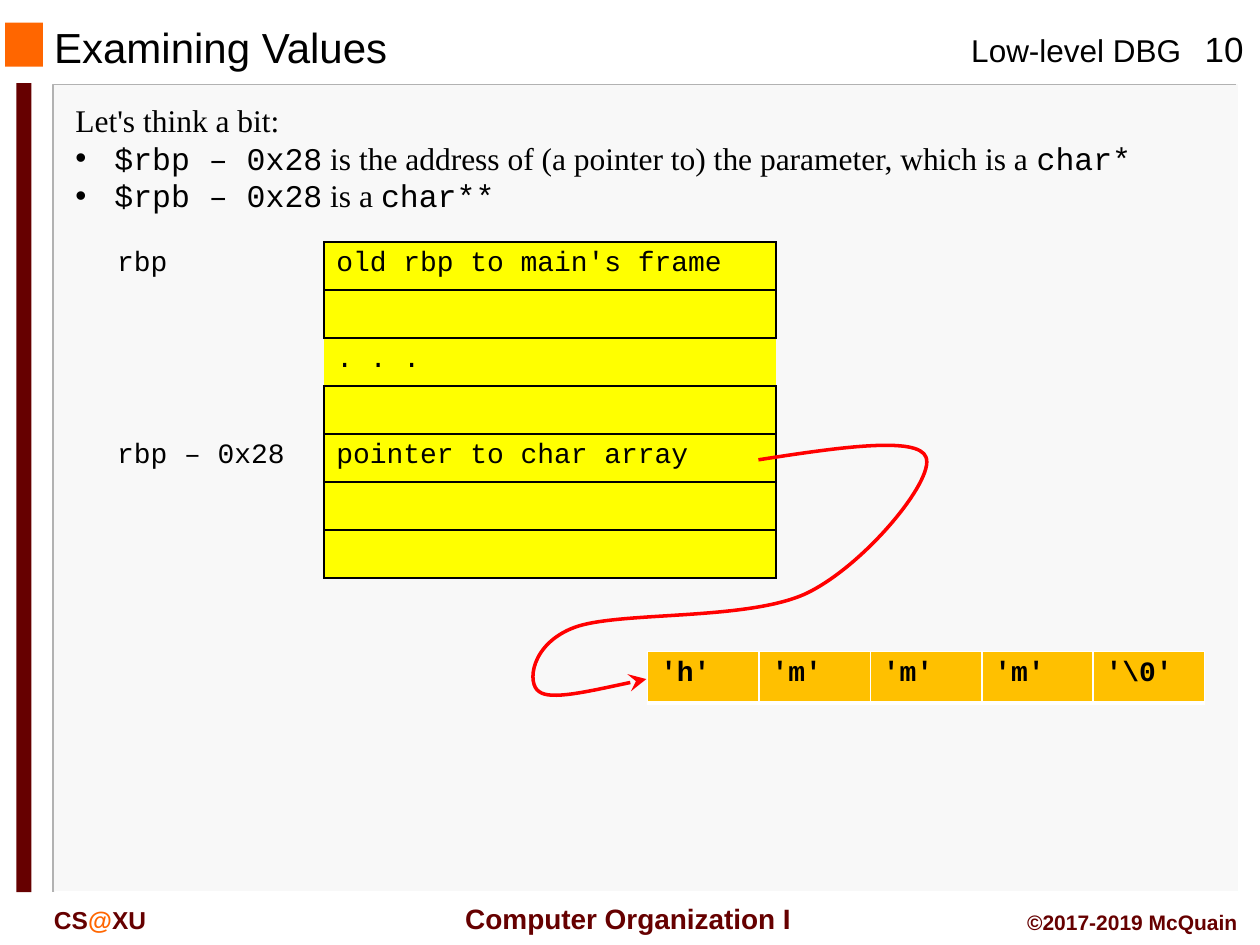
from dataclasses import dataclass
from typing import NamedTuple, Optional

from lxml import etree
from pptx import Presentation
from pptx import util as u
from pptx.dml.color import RGBColor
from pptx.enum import shapes, text
from pptx.oxml.ns import qn


@dataclass(frozen=True)
class Theme:
    sans: str = "Arial"
    serif: str = "Times New Roman"
    mono: str = "Courier New"
    black: str = "000000"
    white: str = "FFFFFF"
    panel: str = "F8F8F8"
    rule: str = "B2B2B2"
    maroon: str = "660000"
    orange: str = "FF6600"
    stack: str = "FFFF00"
    array: str = "FFC000"
    arrow: str = "FF0000"
    title_size: int = 24
    page_size: int = 20
    body_size: int = 18
    cell_size: int = 16
    mark_size: int = 14
    credit_size: int = 12


THEME = Theme()
NO_TABLE_STYLE = "{2D5ABB26-0587-4C30-8999-92F81FD0307C}"


class Box(NamedTuple):
    left: float
    top: float
    width: float
    height: float

    def emu(self):
        return [u.Inches(value) for value in self]


class Run(NamedTuple):
    text: str
    font: Optional[str] = None
    color: Optional[str] = None


class Label(NamedTuple):
    box: Box
    runs: list
    size: int
    color: str = THEME.black
    bold: bool = False
    align: text.PP_ALIGN = text.PP_ALIGN.LEFT
    wrap: bool = True


class Border(NamedTuple):
    sides: str
    color: str
    width: float = 1


def rgb(color: str) -> RGBColor:
    return RGBColor.from_string(color)


def style_font(font, name: str, size: int, color: str, bold: bool = False) -> None:
    font.name, font.size, font.bold = name, u.Pt(size), bold
    font.color.rgb = rgb(color)


def add_runs(paragraph, runs: list) -> None:
    for item in runs:
        run = paragraph.add_run()
        run.text = item.text
        if item.font:
            run.font.name = item.font
        if item.color:
            run.font.color.rgb = rgb(item.color)


def add_block(slide, box: Box, color: str) -> None:
    shape = slide.shapes.add_shape(shapes.MSO_SHAPE.RECTANGLE, *box.emu())
    shape.shadow.inherit = False
    shape.fill.solid()
    shape.fill.fore_color.rgb = rgb(color)
    shape.line.fill.background()


def add_outline(slide, points: list, color: str, width: float):
    corners = [(u.Inches(x), u.Inches(y)) for x, y in points]
    builder = slide.shapes.build_freeform(*corners[0])
    builder.add_line_segments(corners[1:], close=False)
    shape = builder.convert_to_shape()
    shape.shadow.inherit = False
    shape.fill.background()
    shape.line.color.rgb = rgb(color)
    shape.line.width = u.Pt(width)
    return shape


def add_curved_arrow(slide, points: list, color: str, width: float) -> None:
    """Start point, then two control points and an end point per curve."""
    shape = add_outline(slide, points, color, width)
    outline = shape._element.spPr.find(".//" + qn("a:path"))
    segments = outline.findall(qn("a:lnTo"))
    for start in range(0, len(segments), 3):
        curve = etree.SubElement(outline, qn("a:cubicBezTo"))
        for segment in segments[start:start + 3]:
            curve.append(segment[0])
            outline.remove(segment)
    etree.SubElement(shape.line._get_or_add_ln(), qn("a:tailEnd"),
                     type="stealth", w="lg", len="lg")


def add_label(slide, label: Label) -> None:
    frame = slide.shapes.add_textbox(*label.box.emu()).text_frame
    frame.word_wrap = label.wrap
    paragraph = frame.paragraphs[0]
    paragraph.alignment = label.align
    add_runs(paragraph, label.runs)
    style_font(paragraph.font, THEME.sans, label.size, label.color, label.bold)


def add_bullet(paragraph) -> None:
    properties = paragraph._p.get_or_add_pPr()
    properties.set("marL", str(u.Inches(0.31)))
    properties.set("indent", str(-u.Inches(0.31)))
    etree.SubElement(properties, qn("a:buFont"), typeface=THEME.sans)
    etree.SubElement(properties, qn("a:buChar"), char="•")


def add_plain_table(slide, box: Box, rows: int, widths: list):
    table_frame = slide.shapes.add_table(rows, len(widths), *box.emu())
    table = table_frame.table
    table.first_row = table.horz_banding = False
    table._tbl.tblPr.find(qn("a:tableStyleId")).text = NO_TABLE_STYLE
    for column, width in zip(table.columns, widths):
        column.width = u.Inches(width)
    for row in table.rows:
        row.height = u.Inches(box.height / rows)
    return table


def fill_cell(cell, words: str, fill: Optional[str] = None, borders=(), bold=False) -> None:
    properties = cell._tc.get_or_add_tcPr()
    for border in borders:
        for side in border.sides:
            line = etree.SubElement(properties, qn(f"a:ln{side}"), w=str(u.Pt(border.width)))
            paint = etree.SubElement(line, qn("a:solidFill"))
            etree.SubElement(paint, qn("a:srgbClr"), val=border.color)
    if fill:
        cell.fill.solid()
        cell.fill.fore_color.rgb = rgb(fill)
    else:
        cell.fill.background()
    cell.text = words
    style_font(cell.text_frame.paragraphs[0].font, THEME.mono, THEME.cell_size, THEME.black, bold)


def add_frame(slide) -> None:
    # Panel with its edges, corner square and side bar
    add_block(slide, Box(0.43, 0.67, 9.4, 6.41), THEME.panel)
    add_outline(slide, [(9.81, 0.67), (0.42, 0.67), (0.42, 7.08)], THEME.rule, 1)
    add_outline(slide, [(9.83, 0.67), (9.83, 7.08), (0.44, 7.08)], THEME.white, 1)
    add_block(slide, Box(0.04, 0.18, 0.3, 0.35), THEME.orange)
    add_block(slide, Box(0.13, 0.66, 0.12, 6.42), THEME.maroon)

    # Header and footer
    align = text.PP_ALIGN
    for label in (
        Label(Box(7.61, 0.2, 1.89, 0.4), [Run("Low-level DBG")], THEME.body_size, wrap=False),
        Label(Box(9.38, 0.17, 0.67, 0.43), [Run("10")], THEME.page_size, align=align.CENTER),
        Label(Box(3.48, 7.11, 2.95, 0.37), [Run(" Computer Organization I")],
              THEME.cell_size, THEME.maroon, True, align.CENTER, False),
        Label(Box(0.33, 7.13, 1.5, 0.33), [Run("CS"), Run("@", color=THEME.orange), Run("XU")],
              THEME.mark_size, THEME.maroon, True),
        Label(Box(7, 7.17, 2.92, 0.3), [Run("©2017-2019 McQuain")],
              THEME.credit_size, THEME.maroon, True, align.RIGHT),
    ):
        add_label(slide, label)


def add_title(slide, words: str) -> None:
    title = slide.shapes.title
    title.left, title.top, title.width, title.height = Box(0.33, 0.18, 6.33, 0.38).emu()
    title.text_frame.text = words
    title.text_frame.auto_size = text.MSO_AUTO_SIZE.NONE
    title.text_frame.vertical_anchor = text.MSO_ANCHOR.MIDDLE
    paragraph = title.text_frame.paragraphs[0]
    paragraph.alignment = text.PP_ALIGN.LEFT
    style_font(paragraph.font, THEME.sans, THEME.title_size, THEME.black)


def add_body(slide) -> None:
    frame = slide.shapes.add_textbox(*Box(0.5, 0.75, 9.25, 1.01).emu()).text_frame
    frame.word_wrap = True
    lines = [
        [Run("Let's think a bit:")],
        [Run("$rbp – 0x28", THEME.mono),
         Run(" is the address of (a pointer to) the parameter, which is a "),
         Run("char*", THEME.mono)],
        [Run("$rpb – 0x28", THEME.mono), Run(" is a "), Run("char**", THEME.mono)],
    ]
    for index, runs in enumerate(lines):
        paragraph = frame.add_paragraph() if index else frame.paragraphs[0]
        if index:
            add_bullet(paragraph)
        add_runs(paragraph, runs)
        style_font(paragraph.font, THEME.serif, THEME.body_size, THEME.black)


def add_memory(slide) -> None:
    # Stack frame: the elided row is open at the sides
    stack_rows = [("rbp", "old rbp to main's frame"), ("", ""), ("", ". . ."), ("", ""),
                  ("rbp – 0x28", "pointer to char array"), ("", ""), ("", "")]
    stack = add_plain_table(slide, Box(0.83, 1.92, 5.33, 2.67), len(stack_rows), [1.74, 3.59])
    for index, (address, content) in enumerate(stack_rows):
        is_open = content == ". . ."
        fill_cell(stack.cell(index, 0), address,
                  borders=[] if is_open else [Border("R", THEME.black)])
        fill_cell(stack.cell(index, 1), content, THEME.stack,
                  [Border("TB" if is_open else "LRTB", THEME.black)])

    # Character array
    characters = ["'h'", "'m'", "'m'", "'m'", "'\\0'"]
    box = Box(5.14, 5.17, 4.42, 0.41)
    array = add_plain_table(slide, box, 1, [box.width / len(characters)] * len(characters))
    for index, character in enumerate(characters):
        fill_cell(array.cell(0, index), character, THEME.array,
                  [Border("LRT", THEME.white), Border("B", THEME.white, 3)], bold=True)

    # Pointer from the stack to the array
    add_curved_arrow(slide, [
        (6.02, 3.65), (6.66, 3.55), (7.29, 3.46), (7.35, 3.63),
        (7.42, 3.81), (6.86, 4.49), (6.4, 4.71), (5.93, 4.93), (4.91, 4.85), (4.56, 4.98),
        (4.21, 5.11), (4.18, 5.43), (4.28, 5.49), (4.37, 5.56), (4.75, 5.47), (5.13, 5.39),
    ], THEME.arrow, 2)


def main() -> None:
    presentation = Presentation()
    presentation.slide_width, presentation.slide_height = u.Inches(10), u.Inches(7.5)
    slide = presentation.slides.add_slide(presentation.slide_layouts[5])
    add_frame(slide)
    add_title(slide, "Examining Values")
    add_body(slide)
    add_memory(slide)
    presentation.save("out.pptx")


if __name__ == "__main__":
    main()
